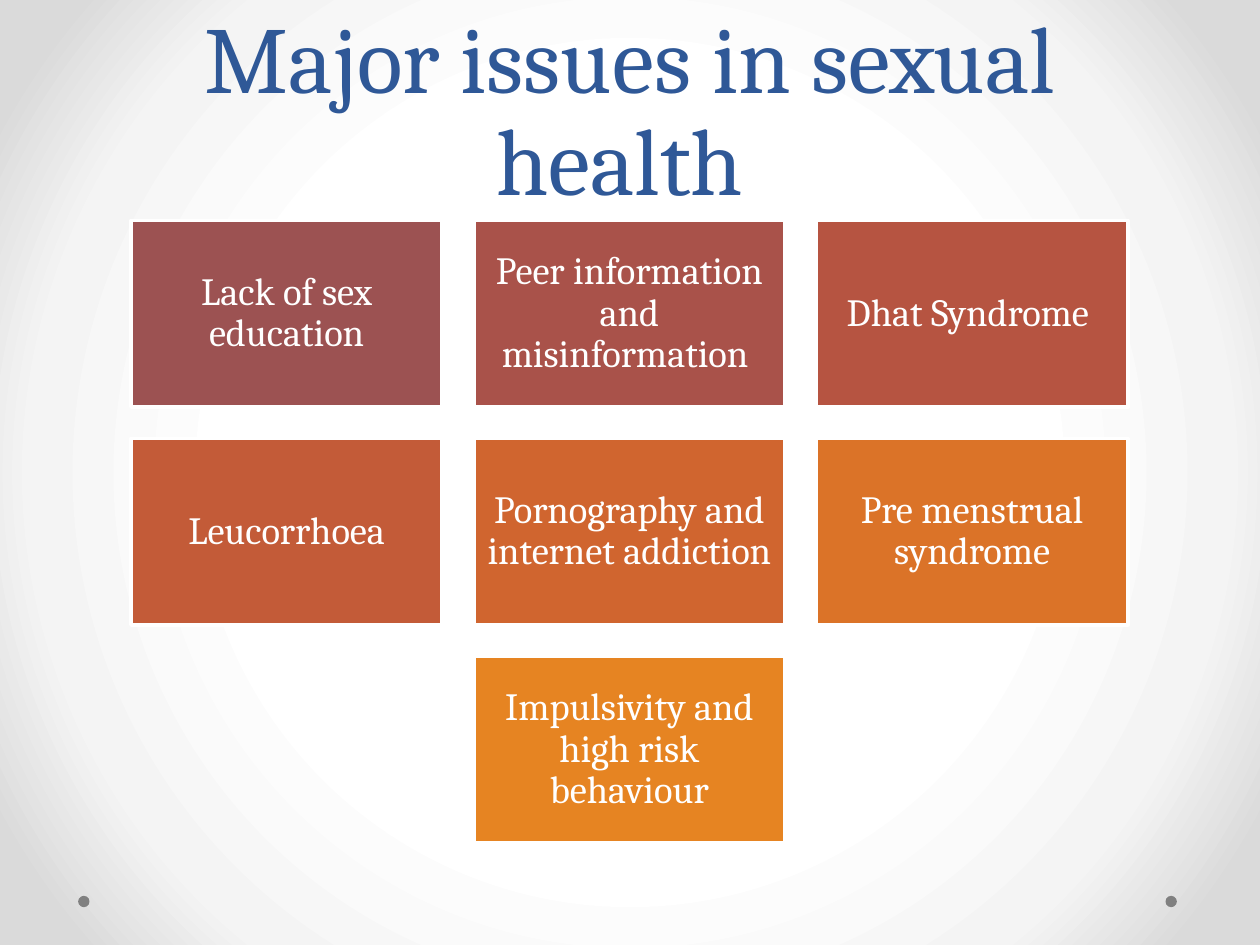
from lxml import etree
from pptx import Presentation
from pptx import util as u
from pptx.dml.color import RGBColor
from pptx.enum import shapes, text
from pptx.oxml.ns import qn

WIDE, HIGH = 10, 7.5
FONT = "Cambria"
COLS = 3
GAP = 0.25
ISSUES = [
    ("Lack of sex education", "9C5252"),
    ("Peer information and misinformation ", "A9524A"),
    ("Dhat Syndrome ", "B65441"),
    ("Leucorrhoea", "C35B38"),
    ("Pornography and internet addiction", "D0652F"),
    ("Pre menstrual syndrome", "DB7328"),
    ("Impulsivity and high risk behaviour", "E68422"),
]


def paint(color, code):
    color.rgb = RGBColor.from_string(code)


def place(box):
    return [u.Inches(v) for v in box]


def write(frame, words, size, code, space, anchor):
    frame.word_wrap = True
    frame.vertical_anchor = anchor
    frame.text = words
    para = frame.paragraphs[0]
    para.alignment = text.PP_ALIGN.CENTER
    para.line_spacing = space
    font = para.runs[0].font
    font.name, font.size = FONT, u.Pt(size)
    paint(font.color, code)


def add_shape(slide, kind, box, code):
    shape = slide.shapes.add_shape(kind, *place(box))
    shape.shadow.inherit = False
    shape.fill.solid()
    paint(shape.fill.fore_color, code)
    shape.line.fill.background()
    return shape


def add_glow(slide):
    """Radial grey gradient, white in the middle."""
    slide.background.fill.gradient()
    grad = slide.element.find(".//" + qn("a:gradFill"))
    for child in list(grad):
        grad.remove(child)
    stops = etree.SubElement(grad, qn("a:gsLst"))
    for pos, code in ((50, "FFFFFF"), (76, "F4F4F4"), (92, "DADADA")):
        stop = etree.SubElement(stops, qn("a:gs"), pos=str(pos * 1000))
        etree.SubElement(stop, qn("a:srgbClr"), val=code)
    way = etree.SubElement(grad, qn("a:path"), path="circle")
    etree.SubElement(way, qn("a:fillToRect"),
                     {side: "50000" for side in "ltrb"})


def add_dots(slide, box):
    """One dot at each end of the footer strip."""
    left, top, width, size = box
    for x in (left, left + width - size):
        add_shape(slide, shapes.MSO_SHAPE.OVAL, (x, top, size, size), "808080")


def add_title(slide, box):
    label = slide.shapes.add_textbox(*place(box))
    write(label.text_frame, "Major issues in sexual health ", 54, "2F5897",
          u.Pt(58), text.MSO_ANCHOR.BOTTOM)


def add_tiles(slide, box):
    """Grid of issues; a short last row is centred."""
    left, top, width, height = box
    rows = -(-len(ISSUES) // COLS)
    wide = (width - GAP * (COLS - 1)) / COLS
    high = (height - GAP * (rows - 1)) / rows
    for i, (words, code) in enumerate(ISSUES):
        row, col = divmod(i, COLS)
        count = min(COLS, len(ISSUES) - row * COLS)
        x = left + (col + (COLS - count) / 2) * (wide + GAP)
        y = top + row * (high + GAP)
        tile = add_shape(slide, shapes.MSO_SHAPE.RECTANGLE,
                         (x, y, wide, high), code)
        paint(tile.line.color, "FFFFFF")
        tile.line.width = u.Pt(2.25)
        frame = tile.text_frame
        frame.margin_left = frame.margin_right = u.Inches(0.09)
        frame.margin_top = frame.margin_bottom = u.Inches(0.09)
        write(frame, words, 22, "FFFFFF", 0.9, text.MSO_ANCHOR.MIDDLE)


def main():
    deck = Presentation()
    deck.slide_width, deck.slide_height = u.Inches(WIDE), u.Inches(HIGH)
    slide = deck.slides.add_slide(deck.slide_layouts[6])
    add_glow(slide)
    add_dots(slide, (0.62, 7.11, 0.872 * WIDE, 0.09))
    add_title(slide, (0.05 * WIDE, 0.21, 0.9 * WIDE, 1.54))
    add_tiles(slide, (1.04, 1.75, 0.791 * WIDE, 4.94))
    deck.save("out.pptx")


if __name__ == "__main__":
    main()
